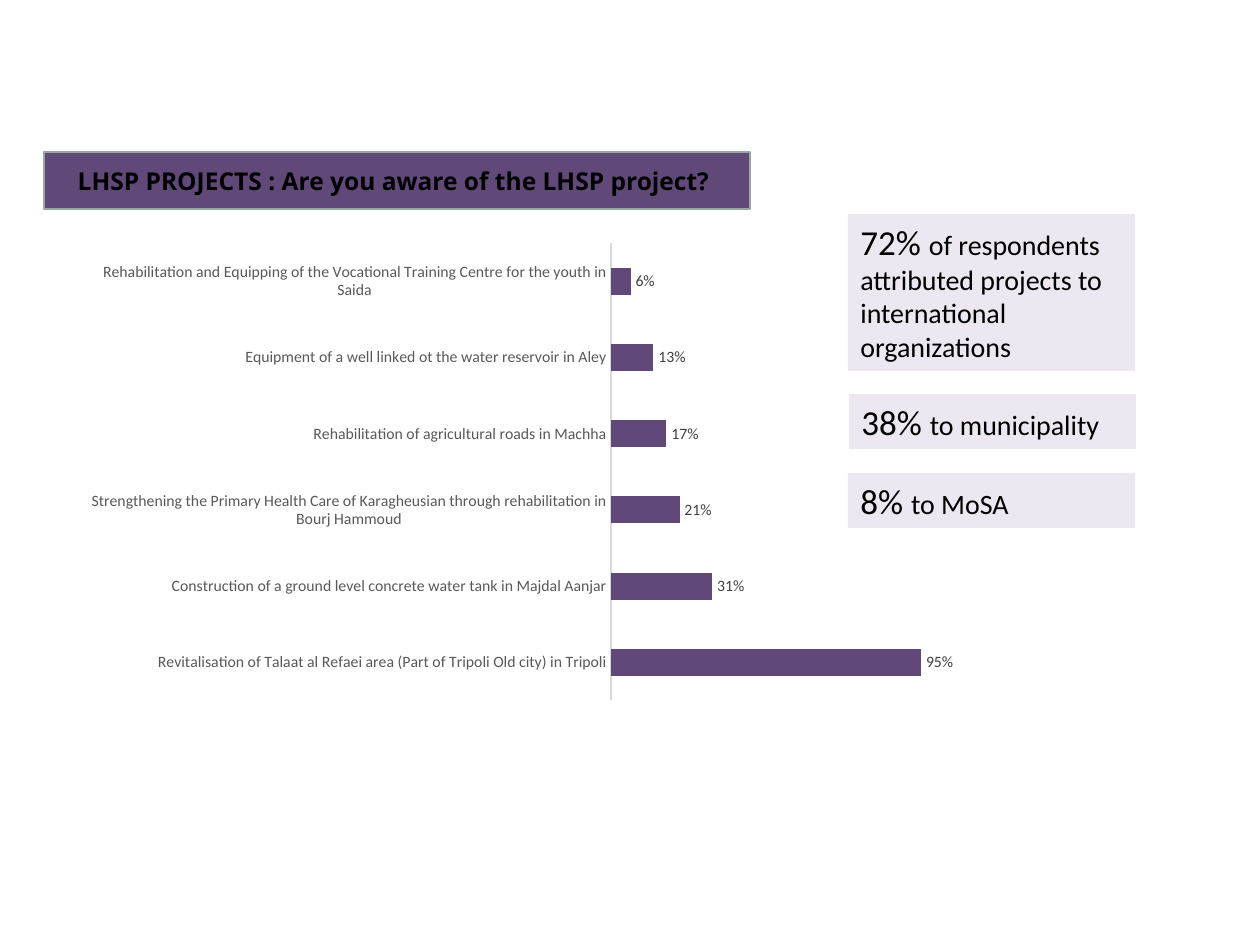
from dataclasses import dataclass

from pptx import Presentation
from pptx.chart.data import CategoryChartData
from pptx.dml.color import RGBColor
from pptx.enum.chart import XL_CHART_TYPE, XL_LABEL_POSITION, XL_TICK_MARK
from pptx.enum.shapes import MSO_SHAPE
from pptx.enum.text import MSO_ANCHOR, PP_ALIGN
from pptx.util import Emu, Pt

SCALE = 914400 / 126  # EMU in one px


@dataclass(frozen=True)
class Theme:
    plum: str = "604878"
    pale: str = "ECE7F1"
    edge: str = "9AA7A1"
    rule: str = "D9D9D9"
    ink: str = "000000"
    grey: str = "595959"
    dark: str = "404040"
    head: str = "Open Sans"
    body: str = "Calibri"
    title: int = 14
    figure: int = 20
    note: int = 16
    chart: int = 10
    label: int = 9


THEME = Theme()

# Share of respondents aware of each project, from the bottom bar up
PROJECTS = [
    ("Revitalisation of Talaat al Refaei area (Part of Tripoli Old city) in Tripoli", 0.95),
    ("Construction of a ground level concrete water tank in Majdal Aanjar", 0.31),
    ("Strengthening the Primary Health Care of Karagheusian through rehabilitation in Bourj Hammoud", 0.21),
    ("Rehabilitation of agricultural roads in Machha", 0.17),
    ("Equipment of a well linked ot the water reservoir in Aley", 0.13),
    ("Rehabilitation and Equipping of the Vocational Training Centre for the youth in Saida", 0.06),
]

# Left, top, height, figure, wording
NOTES = [
    (848, 214, 157, "72% ", "of respondents attributed projects to international organizations"),
    (849, 394, 55, "38% ", "to municipality"),
    (848, 473, 55, "8% ", "to MoSA"),
]


def px(*sizes):
    return [Emu(round(size * SCALE)) for size in sizes]


def rgb(code):
    return RGBColor.from_string(code)


def style(font, name, size, color, bold=False):
    font.name, font.size, font.bold = name, Pt(size), bold
    font.color.rgb = rgb(color)


def add_box(slide, box, fill, edge=None):
    shape = slide.shapes.add_shape(MSO_SHAPE.RECTANGLE, *px(*box))
    shape.shadow.inherit = False
    shape.fill.solid()
    shape.fill.fore_color.rgb = rgb(fill)
    if edge:
        shape.line.color.rgb = rgb(edge)
        shape.line.width = Pt(1)
    else:
        shape.line.fill.background()
    shape.text_frame.word_wrap = True
    return shape


def add_title(slide, box, text):
    frame = add_box(slide, box, THEME.plum, THEME.edge).text_frame
    frame.text = text
    frame.vertical_anchor = MSO_ANCHOR.MIDDLE
    line = frame.paragraphs[0]
    line.alignment = PP_ALIGN.CENTER
    style(line.runs[0].font, THEME.head, THEME.title, THEME.ink, bold=True)


def add_note(slide, box, figure, words):
    frame = add_box(slide, box, THEME.pale).text_frame
    frame.vertical_anchor = MSO_ANCHOR.TOP
    line = frame.paragraphs[0]
    line.alignment = PP_ALIGN.LEFT
    for text, size in ((figure, THEME.figure), (words, THEME.note)):
        run = line.add_run()
        run.text = text
        style(run.font, THEME.body, size, THEME.ink)


def add_bars(slide, box, rows):
    data = CategoryChartData(number_format="0%")
    data.categories = [name for name, share in rows]
    data.add_series("Series 1", [share for name, share in rows])
    chart = slide.shapes.add_chart(XL_CHART_TYPE.BAR_CLUSTERED, *px(*box), data).chart
    chart.has_legend = chart.has_title = False
    style(chart.font, THEME.body, THEME.chart, THEME.ink)

    # Axes
    names = chart.category_axis
    names.major_tick_mark = names.minor_tick_mark = XL_TICK_MARK.NONE
    names.format.line.color.rgb = rgb(THEME.rule)
    names.format.line.width = Pt(0.75)
    style(names.tick_labels.font, THEME.body, THEME.label, THEME.grey)
    scale = chart.value_axis
    scale.minimum_scale, scale.maximum_scale = 0, 1
    scale.has_major_gridlines = False
    scale.visible = False

    # Bars and their labels
    plot = chart.plots[0]
    plot.gap_width = 182
    plot.vary_by_categories = False
    bars = plot.series[0]
    bars.format.fill.solid()
    bars.format.fill.fore_color.rgb = rgb(THEME.plum)
    tags = bars.data_labels
    tags.show_value = True
    tags.position = XL_LABEL_POSITION.OUTSIDE_END
    tags.number_format, tags.number_format_is_linked = "0%", False
    style(tags.font, THEME.body, THEME.label, THEME.dark)


def main():
    deck = Presentation()
    deck.slide_width, deck.slide_height = px(1260, 945)
    slide = deck.slides.add_slide(deck.slide_layouts[6])

    add_title(slide, (44, 152, 706, 57), "LHSP PROJECTS : Are you aware of the LHSP project? ")
    add_bars(slide, (74, 234, 881, 476), PROJECTS)
    for left, top, height, figure, words in NOTES:
        add_note(slide, (left, top, 287, height), figure, words)

    deck.save("out.pptx")


if __name__ == "__main__":
    main()
